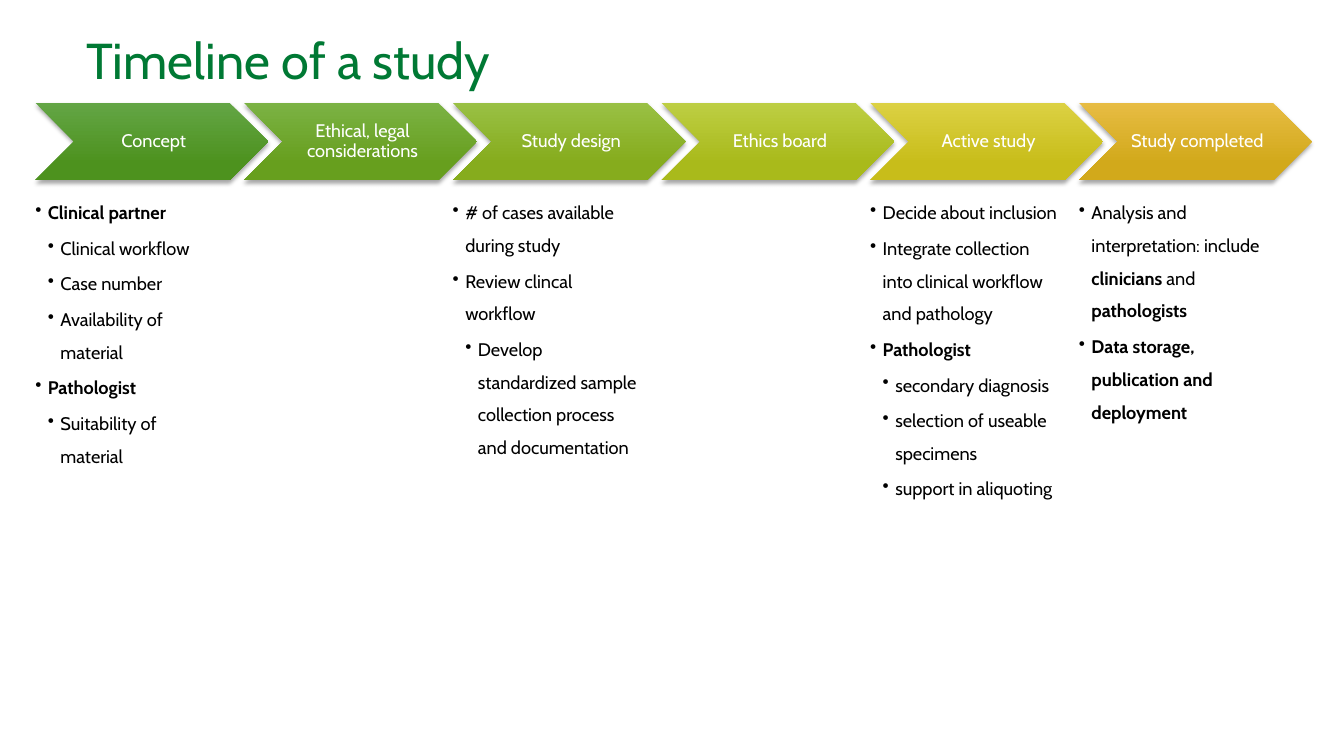
from lxml import etree
from pptx import Presentation
from pptx.dml.color import RGBColor
from pptx.enum.shapes import MSO_SHAPE
from pptx.enum.text import MSO_ANCHOR, PP_ALIGN
from pptx.oxml.ns import qn
from pptx.util import Inches, Pt

CHEVRON = MSO_SHAPE.CHEVRON
MIDDLE = MSO_ANCHOR.MIDDLE
CENTER = PP_ALIGN.CENTER

FONT = "Cabin"
BLACK, WHITE, GREEN = "000000", "FFFFFF", "007934"
INDENT = 0.125
STAGE_STEP = 2.07

# Each stage: label, gradient colours, tasks as (level, (text, bold), ...)
STAGES = [
    ("Concept", "63A545", "4D921E", [
        (1, ("Clinical partner", True)),
        (2, ("Clinical workflow", False)),
        (2, ("Case number", False)),
        (2, ("Availability of material", False)),
        (1, ("Pathologist", True)),
        (2, ("Suitability of material", False)),
    ]),
    ("Ethical, legal considerations", "7BB244", "679F1E", []),
    ("Study design", "99C044", "86AC1D", [
        (1, ("# of cases available during study", False)),
        (1, ("Review clincal workflow", False)),
        (2, ("Develop standardized sample collection process and documentation", False)),
    ]),
    ("Ethics board", "BDCE43", "A9BA1B", []),
    ("Active study", "DCD143", "C8BD1A", [
        (1, ("Decide about inclusion", False)),
        (1, ("Integrate collection into clinical workflow and pathology", False)),
        (1, ("Pathologist", True)),
        (2, ("secondary diagnosis", False)),
        (2, ("selection of useable specimens", False)),
        (2, ("support in aliquoting", False)),
    ]),
    ("Study completed", "E7BC43", "D2A91B", [
        (1, ("Analysis and interpretation: include ", False), ("clinicians ", True),
         ("and ", False), ("pathologists", True)),
        (1, ("Data storage, publication and deployment", True)),
    ]),
]


def rgb(color):
    return RGBColor.from_string(color)


def add_run(paragraph, text, size, color, bold=False):
    run = paragraph.add_run()
    run.text = text
    run.font.name = FONT
    run.font.size = Pt(size)
    run.font.bold = bold
    run.font.color.rgb = rgb(color)


def set_margins(frame, left, top, right, bottom):
    frame.margin_left, frame.margin_top = Inches(left), Inches(top)
    frame.margin_right, frame.margin_bottom = Inches(right), Inches(bottom)


def add_soft_shadow(shape):
    shape.shadow.inherit = False
    effects = shape._element.spPr.find(qn("a:effectLst"))
    shadow = etree.SubElement(effects, qn("a:outerShdw"), blurRad=str(Pt(3)),
                              dist=str(Pt(2)), dir="5400000", rotWithShape="0")
    color = etree.SubElement(shadow, qn("a:srgbClr"), val=BLACK)
    etree.SubElement(color, qn("a:alpha"), val="35000")


def add_bullet(paragraph, level):
    paragraph.level = level
    properties = paragraph._p.get_or_add_pPr()
    properties.set("marL", str(Inches(INDENT * level)))
    properties.set("indent", str(-Inches(INDENT)))
    etree.SubElement(properties, qn("a:buChar"), char="•")


def add_title(slide, left, top, width, height):
    box = slide.shapes.add_textbox(Inches(left), Inches(top), Inches(width), Inches(height))
    box.text_frame.word_wrap = True
    add_run(box.text_frame.paragraphs[0], "Timeline of a study", 36, GREEN)


def add_stage_arrow(slide, label, light, dark, left, top, width, height):
    arrow = slide.shapes.add_shape(CHEVRON, Inches(left), Inches(top),
                                   Inches(width), Inches(height))
    arrow.line.fill.background()
    arrow.fill.gradient()
    arrow.fill.gradient_angle = 270
    for stop, color, position in zip(arrow.fill.gradient_stops, (light, dark), (0, 0.78)):
        stop.color.rgb = rgb(color)
        stop.position = position
    add_soft_shadow(arrow)

    frame = arrow.text_frame
    frame.word_wrap = True
    frame.vertical_anchor = MIDDLE
    set_margins(frame, 0.06, 0.02, 0.02, 0.02)
    paragraph = frame.paragraphs[0]
    paragraph.alignment = CENTER
    paragraph.line_spacing = 0.9
    add_run(paragraph, label, 13, WHITE)


def add_task_list(slide, tasks, left, top, width, height):
    box = slide.shapes.add_textbox(Inches(left), Inches(top), Inches(width), Inches(height))
    frame = box.text_frame
    frame.word_wrap = True
    set_margins(frame, 0, 0, 0, 0)
    for index, (level, *runs) in enumerate(tasks):
        paragraph = frame.add_paragraph() if index else frame.paragraphs[0]
        paragraph.line_spacing = 1.5
        paragraph.space_after = Pt(2)
        add_bullet(paragraph, level)
        for text, bold in runs:
            add_run(paragraph, text, 13, BLACK, bold)


def add_timeline(slide, left, top):
    for index, (label, light, dark, tasks) in enumerate(STAGES):
        stage_left = left + index * STAGE_STEP
        add_stage_arrow(slide, label, light, dark, stage_left, top, 2.31, 0.77)
        if tasks:
            add_task_list(slide, tasks, stage_left, top + 0.87, 1.85, 4.59)


def main():
    presentation = Presentation()
    presentation.slide_width = Inches(13.33)
    presentation.slide_height = Inches(7.5)
    slide = presentation.slides.add_slide(presentation.slide_layouts[6])
    add_title(slide, 0.76, 0.24, 10.99, 1.14)
    add_timeline(slide, 0.35, 1.02)
    presentation.save("out.pptx")


if __name__ == "__main__":
    main()
